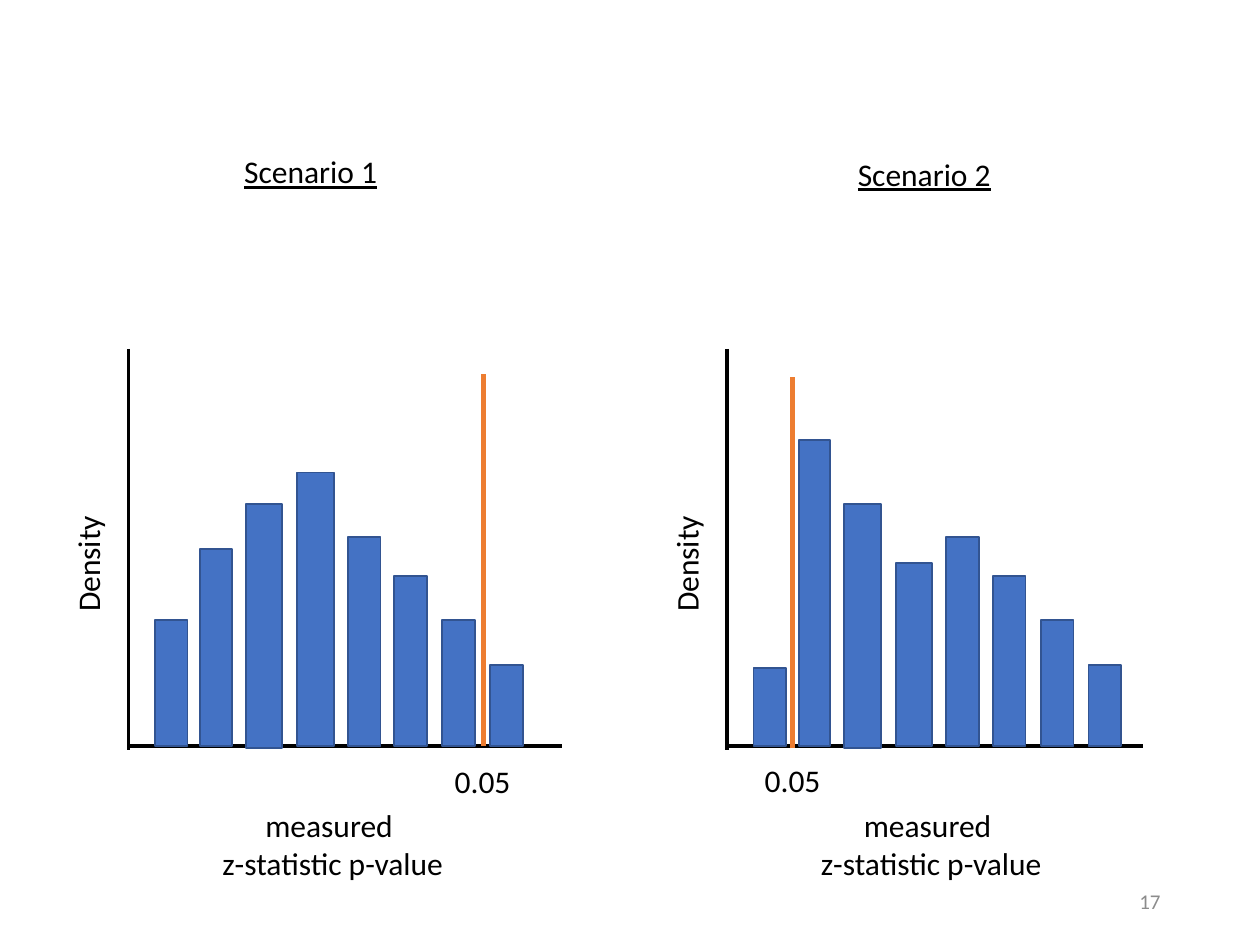
from lxml import etree
from pptx import Presentation
from pptx.dml.color import RGBColor
from pptx.enum.shapes import MSO_CONNECTOR, MSO_SHAPE
from pptx.enum.text import MSO_ANCHOR, PP_ALIGN
from pptx.oxml.ns import qn
from pptx.util import Inches, Pt

RECT = MSO_SHAPE.RECTANGLE
STRAIGHT = MSO_CONNECTOR.STRAIGHT
LEFT, CENTER, RIGHT = PP_ALIGN.LEFT, PP_ALIGN.CENTER, PP_ALIGN.RIGHT
TOP, MIDDLE = MSO_ANCHOR.TOP, MSO_ANCHOR.MIDDLE

BASELINE = 5.92
# Offset from the vertical axis, width and bottom edge of each bar
BAR_SLOTS = [
    (0.21, 0.26, BASELINE), (0.57, 0.25, BASELINE), (0.93, 0.29, 5.94),
    (1.34, 0.29, BASELINE), (1.74, 0.26, BASELINE), (2.11, 0.26, BASELINE),
    (2.49, 0.26, BASELINE), (2.87, 0.26, BASELINE),
]


def rgb(value):
    return RGBColor.from_string(value)


class Sketch:
    font = "Calibri"
    ink = "000000"
    gray = "8C8C8C"
    bar_fill = "4472C4"
    bar_line = "325491"
    accent = "ED7D31"

    def __init__(self, slide):
        self.slide = slide

    def text(self, lines, x, y, w, h, size=18, color=ink, align=LEFT,
             anchor=TOP, underline=None, rotation=0):
        sp = self.slide.shapes.add_textbox(Inches(x), Inches(y), Inches(w), Inches(h))
        sp.rotation = rotation
        tf = sp.text_frame
        tf.word_wrap = False
        tf.vertical_anchor = anchor
        tf.text = lines
        for p in tf.paragraphs:
            p.alignment = align
            p.font.name = self.font
            p.font.size = Pt(size)
            p.font.underline = underline
            p.font.color.rgb = rgb(color)

    def line(self, x1, y1, x2, y2, color=ink, width=2.25):
        c = self.slide.shapes.add_connector(
            STRAIGHT, Inches(x1), Inches(y1), Inches(x2), Inches(y2))
        c.line.color.rgb = rgb(color)
        c.line.width = Pt(width)
        etree.SubElement(c._element.spPr, qn("a:effectLst"))

    def bar(self, x, w, h, bottom):
        sp = self.slide.shapes.add_shape(
            RECT, Inches(x), Inches(bottom - h), Inches(w), Inches(h))
        sp.shadow.inherit = False
        sp.fill.solid()
        sp.fill.fore_color.rgb = rgb(self.bar_fill)
        sp.line.color.rgb = rgb(self.bar_line)
        sp.line.width = Pt(1)

    def histogram(self, x, axis_length, heights, cutoff, cutoff_bottom, label_x, label_y):
        """Draw axes, bars, the 0.05 cutoff and labels; x is the vertical axis."""
        self.line(x, 2.77, x, 5.95)
        self.line(x + axis_length, BASELINE, x, BASELINE)
        for (offset, w, bottom), h in zip(BAR_SLOTS, heights):
            self.bar(x + offset, w, h, bottom)
        self.line(cutoff, cutoff_bottom, cutoff, cutoff_bottom - 2.95, self.accent, 3)
        self.text("0.05", label_x, label_y, 0.65, 0.4)
        self.text("Density", x - 0.81, 4.27, 0.97, 0.4, rotation=270)
        self.text("measured \nz-statistic p-value", x + 0.63, 6.35, 1.98, 0.71, align=CENTER)


def main():
    prs = Presentation()
    prs.slide_width, prs.slide_height = Inches(10), Inches(7.5)
    s = Sketch(prs.slides.add_slide(prs.slide_layouts[6]))

    s.text("17", 7.06, 6.95, 2.25, 0.4, size=12, color=s.gray, align=RIGHT, anchor=MIDDLE)
    s.histogram(1.02, 3.44, [1, 1.56, 1.94, 2.17, 1.66, 1.35, 1, 0.64],
                3.84, 5.92, 3.51, 6)
    s.histogram(5.77, 3.3, [0.62, 2.43, 1.94, 1.45, 1.66, 1.35, 1, 0.64],
                6.29, 5.94, 5.97, 5.99)
    s.text("Scenario 1", 1.84, 1.16, 1.27, 0.4, underline=True)
    s.text("Scenario 2", 6.71, 1.18, 1.27, 0.4, underline=True)

    prs.save("out.pptx")


if __name__ == "__main__":
    main()
